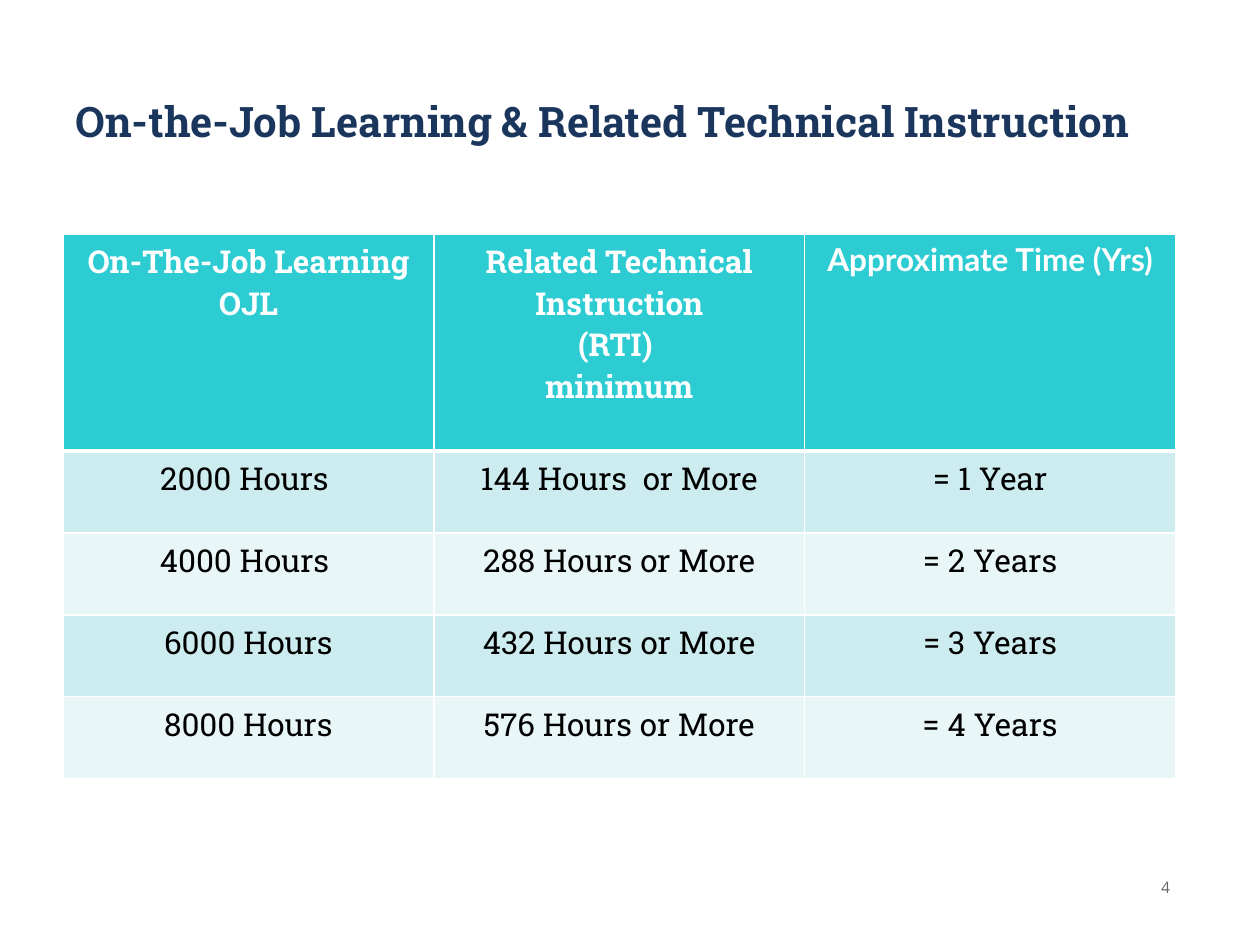
from lxml.etree import SubElement
from pptx import Presentation
from pptx.dml.color import RGBColor
from pptx.enum.text import MSO_ANCHOR as Anchor, PP_ALIGN as Align
from pptx.oxml.ns import qn
from pptx.util import Inches, Pt

NAVY, TEAL, WHITE, BLACK, GRAY = "1B365D", "2DCCD3", "FFFFFF", "000000", "666666"
BANDS = ["CDECEF", "E8F6F7"]
SLAB, LATO, SANS = "Roboto Slab", "Lato", "Open Sans"


def color(code):
    return RGBColor.from_string(code)


def write(frame, text, font=SLAB, size=18, ink=BLACK, bold=False, align=Align.LEFT):
    """Fill a text frame, one paragraph per line of text."""
    frame.word_wrap = True
    for number, line in enumerate(text.split("\n")):
        paragraph = frame.paragraphs[0] if number == 0 else frame.add_paragraph()
        paragraph.alignment = align
        run = paragraph.add_run()
        run.text = line
        run.font.name, run.font.size, run.font.bold = font, Pt(size), bold
        run.font.color.rgb = color(ink)


def set_borders(cell, bottom):
    """Draw white cell edges; they must come before the fill."""
    properties = cell._tc.get_or_add_tcPr()
    for edge, width in (("L", 1), ("R", 1), ("T", 1), ("B", bottom)):
        line = SubElement(properties, qn(f"a:ln{edge}"), w=str(Pt(width)))
        SubElement(SubElement(line, qn("a:solidFill")), qn("a:srgbClr"), val=WHITE)


class SlideBuilder:
    def __init__(self, slide):
        self.slide = slide

    def text(self, left, top, width, height, text, **style):
        box = self.slide.shapes.add_textbox(
            Inches(left), Inches(top), Inches(width), Inches(height))
        box.text_frame.vertical_anchor = Anchor.MIDDLE
        write(box.text_frame, text, **style)

    def table(self, left, top, width, header, rows, header_height, row_height):
        height = header_height + row_height * len(rows)
        table = self.slide.shapes.add_table(
            len(rows) + 1, len(header), Inches(left), Inches(top),
            Inches(width), Inches(height)).table
        for row in table.rows:
            row.height = Inches(row_height)
        table.rows[0].height = Inches(header_height)

        for column, (label, font) in enumerate(header):
            self.cell(table.cell(0, column), label, TEAL, 3,
                      font=font, ink=WHITE, bold=True)
        for number, values in enumerate(rows):
            for column, value in enumerate(values):
                self.cell(table.cell(number + 1, column), value, BANDS[number % 2], 1)
        # The heavy rule under the header belongs to both rows
        for column in range(len(header)):
            top_edge = table.cell(1, column)._tc.tcPr.find(qn("a:lnT"))
            top_edge.set("w", str(Pt(3)))

    def cell(self, cell, text, fill, bottom, **style):
        set_borders(cell, bottom)
        cell.fill.solid()
        cell.fill.fore_color.rgb = color(fill)
        write(cell.text_frame, text, align=Align.CENTER, **style)


def main():
    deck = Presentation()
    deck.slide_width, deck.slide_height = Inches(10), Inches(7.5)
    builder = SlideBuilder(deck.slides.add_slide(deck.slide_layouts[6]))

    # Page number
    builder.text(9.04, 6.79, 0.42, 0.5, "4",
                 font=SANS, size=9, ink=GRAY, align=Align.CENTER)

    # Title
    builder.text(0.5, 0.33, 9, 1.25,
                 "On-the-Job Learning & Related Technical Instruction",
                 size=24, ink=NAVY, bold=True)

    # Hours and years
    header = [
        ("On-The-Job Learning\nOJL", SLAB),
        ("Related Technical Instruction\n(RTI) \nminimum", SLAB),
        ("Approximate Time (Yrs)", LATO),
    ]
    rows = [
        ("2000 Hours ", "144 Hours  or More", "= 1 Year"),
        ("4000 Hours ", "288 Hours or More", "= 2 Years"),
        ("6000 Hours", "432 Hours or More", "= 3 Years"),
        ("8000 Hours", "576 Hours or More", "= 4 Years"),
    ]
    builder.table(0.5, 1.86, 8.83, header, rows, header_height=1.72, row_height=0.65)

    deck.save("out.pptx")


if __name__ == "__main__":
    main()
